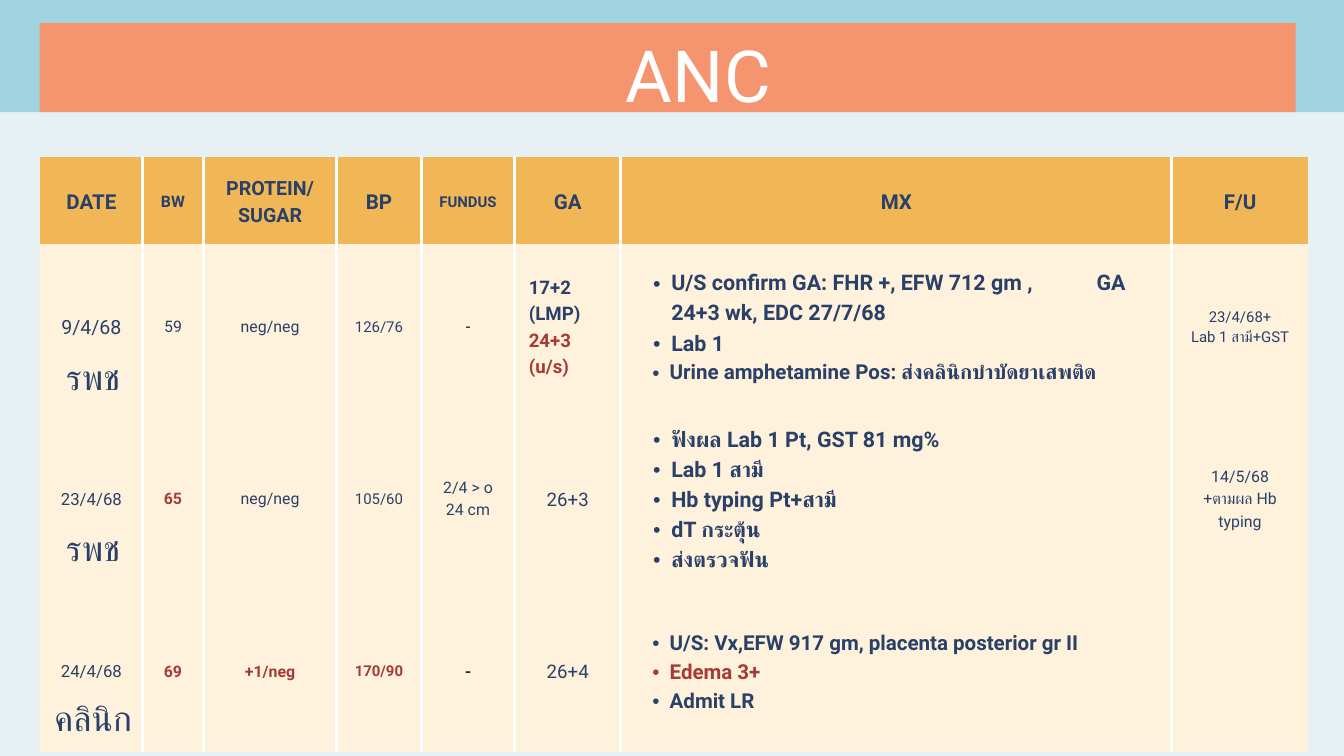
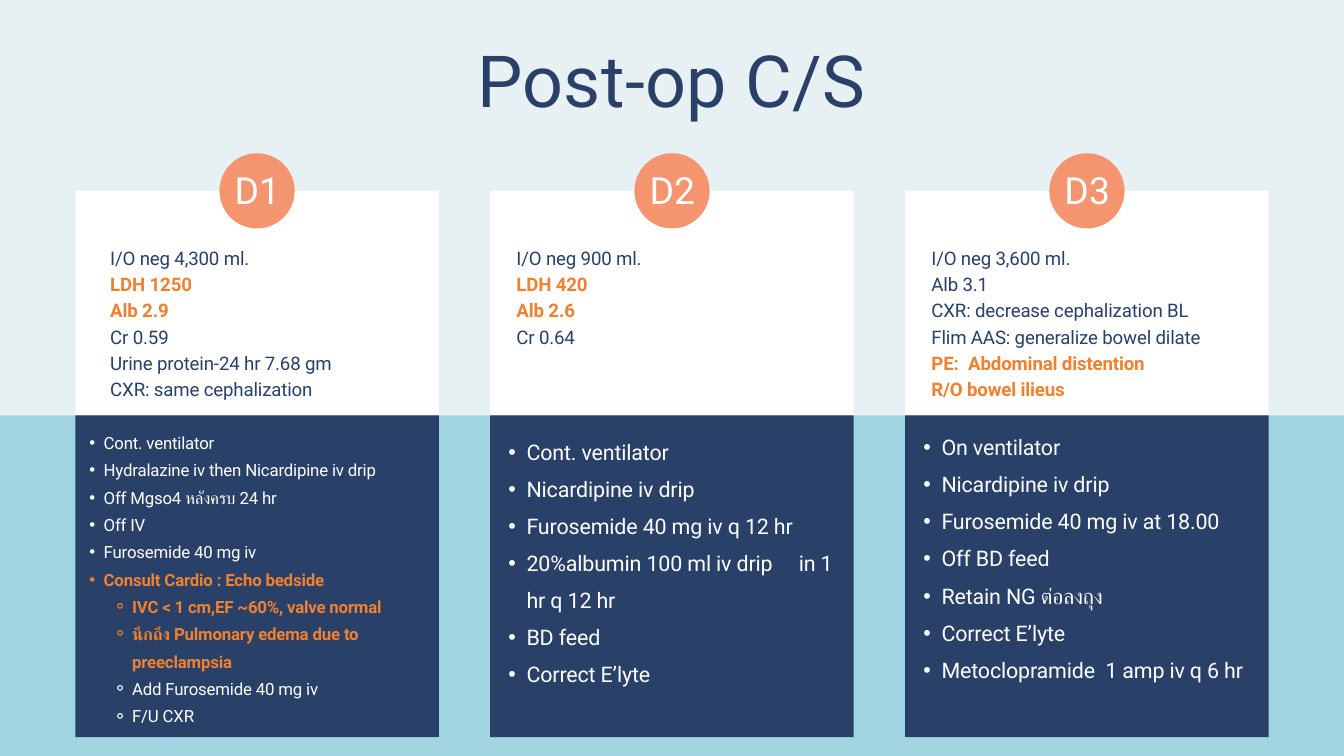
from dataclasses import dataclass

from lxml.etree import SubElement
from pptx import Presentation
from pptx.dml.color import RGBColor
from pptx.enum.shapes import MSO_SHAPE
from pptx.enum.text import MSO_ANCHOR, PP_ALIGN
from pptx.oxml.ns import qn
from pptx.util import Inches, Pt

SLIDE_WIDTH, SLIDE_HEIGHT = 20, 11.25
FONT = "Roboto"
NAVY, WHITE, BLACK = "294069", "FFFFFF", "000000"
PALE, SKY, CORAL = "E7F1F4", "A1D4E1", "F4956F"
AMBER, CREAM = "F1B756", "FFF2DC"
RED, ORANGE = "A43B37", "EF8130"
GAP = "|"  # stands for one widened space inside a line
LEFT, CENTER = PP_ALIGN.LEFT, PP_ALIGN.CENTER


@dataclass
class Line:
    text: str
    size: float
    color: str = NAVY
    bold: bool = False
    level: int = 0
    gap: float = 0


def rgb(color):
    return RGBColor.from_string(color)


def add_run(paragraph, text, line, tracking):
    run = paragraph.add_run()
    run.text = text
    font = run.font
    font.size, font.bold, font.name = Pt(line.size), line.bold, FONT
    font.color.rgb = rgb(line.color)
    properties = run._r.get_or_add_rPr()
    for script in ("a:ea", "a:cs"):
        SubElement(properties, qn(script)).set("typeface", FONT)
    if tracking:
        properties.set("spc", str(round(tracking * 100)))


def add_bullet(paragraph, line):
    """Give the paragraph a hanging bullet whose indent follows the text size."""
    indent = line.size * 0.0235 * line.level
    paragraph.level = line.level
    properties = paragraph._p.get_or_add_pPr()
    properties.set("marL", str(Inches(indent)))
    properties.set("indent", str(-Inches(indent / (line.level + 1))))
    SubElement(properties, qn("a:buFont")).set("typeface", "Arial")
    SubElement(properties, qn("a:buChar")).set("char", "•⚬"[line.level - 1])


def write_lines(frame, lines, align=LEFT, leading=1.4, tracking=0):
    for index, line in enumerate(lines):
        paragraph = frame.add_paragraph() if index else frame.paragraphs[0]
        paragraph.alignment = align
        paragraph.line_spacing = Pt(round(line.size * leading, 1))
        if line.level:
            add_bullet(paragraph, line)
        for part, text in enumerate(line.text.split(GAP)):
            if part:
                add_run(paragraph, " ", line, line.gap)
            add_run(paragraph, text, line, tracking)


def add_text(slide, box, lines, inset=0, anchor=MSO_ANCHOR.TOP, **style):
    frame = slide.shapes.add_textbox(*map(Inches, box)).text_frame
    frame.word_wrap = True
    frame.vertical_anchor = anchor
    frame.margin_left = frame.margin_right = Inches(inset)
    frame.margin_top = frame.margin_bottom = Inches(inset)
    write_lines(frame, lines, **style)


def add_block(slide, box, color, kind=MSO_SHAPE.RECTANGLE):
    shape = slide.shapes.add_shape(kind, *map(Inches, box))
    shape.shadow.inherit = False
    shape.fill.solid()
    shape.fill.fore_color.rgb = rgb(color)
    shape.line.fill.background()


def add_title(slide, box, text, color):
    add_text(slide, box, [Line(text, 77, color)],
             align=CENTER, leading=1.1, tracking=0.4)


def add_slide(presentation, background, band_height, band_color):
    """Add a slide with a full-width band across the top."""
    slide = presentation.slides.add_slide(presentation.slide_layouts[6])
    slide.background.fill.solid()
    slide.background.fill.fore_color.rgb = rgb(background)
    add_block(slide, (0, 0, SLIDE_WIDTH, band_height), band_color)
    return slide


# Antenatal visits

COLUMN_WIDTHS = [1.52, 0.91, 1.98, 1.26, 1.39, 1.58, 8.2, 2.03]
ROW_HEIGHTS = [1.3, 2.43, 2.69, 2.44]
GA_COLUMN, MX_COLUMN = 5, 6
HEADINGS = [("DATE", 22), ("BW", 17), ("PROTEIN/SUGAR", 21), ("BP", 22),
            ("FUNDUS", 16), ("GA", 22), ("MX", 22), ("F/U", 22)]


def plan(text, size=23, color=NAVY, gap=0):
    return Line(text, size, color, True, 1, gap)


VISITS = [
    [
        [Line("9/4/68", 21)],
        [Line("59", 17)],
        [Line("neg/neg", 17)],
        [Line("126/76", 16)],
        [Line("-", 17, BLACK)],
        [Line("17+2", 20, NAVY, True), Line("(LMP)", 20, NAVY, True),
         Line("24+3 (u/s)", 20, RED, True)],
        [plan("U/S confirm GA: FHR +, EFW 712 gm ,|GA 24+3 wk, EDC 27/7/68", gap=62),
         plan("Lab 1"),
         plan("Urine amphetamine Pos: ส่งคลินิกบำบัดยาเสพติด", 22)],
        [Line("23/4/68+", 16), Line("Lab 1 สามี+GST", 16)],
    ],
    [
        [Line("23/4/68", 18)],
        [Line("65", 17, RED, True)],
        [Line("neg/neg", 17)],
        [Line("105/60", 16)],
        [Line("2/4 > o", 17), Line("24 cm", 17)],
        [Line("26+3", 20)],
        [plan("ฟังผล Lab 1 Pt, GST 81 mg%"), plan("Lab 1 สามี"),
         plan("Hb typing Pt+สามี"), plan("dT กระตุ้น"), plan("ส่งตรวจฟัน")],
        [Line("14/5/68", 17), Line("+ตามผล Hb typing", 17)],
    ],
    [
        [Line("24/4/68", 18)],
        [Line("69", 17, RED, True)],
        [Line("+1/neg", 17, RED, True)],
        [Line("170/90", 16, RED, True)],
        [Line("-", 21, BLACK)],
        [Line("26+4", 20)],
        [plan("U/S: Vx,EFW 917 gm, placenta posterior gr II", 22),
         plan("Edema 3+", 22, RED), plan("Admit LR", 22)],
        [],
    ],
]
CLINICS = ["รพช", "รพช", "คลินิก"]


def add_borders(cell, sides):
    """Draw thick white lines on the given sides and none on the others."""
    properties = cell._tc.get_or_add_tcPr()
    for side in "LRTB":
        line = SubElement(properties, qn(f"a:ln{side}"))
        if side in sides:
            line.set("w", str(Pt(3.75)))
            fill = SubElement(line, qn("a:solidFill"))
            SubElement(fill, qn("a:srgbClr")).set("val", WHITE)
        else:
            SubElement(line, qn("a:noFill"))


def fill_cell(cell, lines, color, sides, align):
    add_borders(cell, sides)
    cell.fill.solid()
    cell.fill.fore_color.rgb = rgb(color)
    cell.vertical_anchor = MSO_ANCHOR.MIDDLE
    cell.margin_left = cell.margin_right = Inches(0.21)
    cell.margin_top = cell.margin_bottom = Inches(0.21)
    write_lines(cell.text_frame, lines, align=align)


def add_visit_table(slide, left, top):
    rows = [[[Line(text, size, bold=True)] for text, size in HEADINGS]] + VISITS
    box = (left, top, sum(COLUMN_WIDTHS), sum(ROW_HEIGHTS))
    table = slide.shapes.add_table(
        len(rows), len(HEADINGS), *map(Inches, box)).table
    table.first_row = table.horz_banding = False
    for column, width in zip(table.columns, COLUMN_WIDTHS):
        column.width = Inches(width)
    last = len(HEADINGS) - 1
    for r, cells in enumerate(rows):
        table.rows[r].height = Inches(ROW_HEIGHTS[r])
        for c, lines in enumerate(cells):
            sides = ("L" if c else "") + ("R" if c < last else "")
            flush_left = r and (c == MX_COLUMN or c == GA_COLUMN and len(lines) > 1)
            fill_cell(table.cell(r, c), lines, CREAM if r else AMBER, sides,
                      LEFT if flush_left else CENTER)


def build_visits(presentation):
    slide = add_slide(presentation, PALE, 1.67, SKY)
    add_block(slide, (0.59, 0.34, 18.69, 1.33), CORAL)
    add_title(slide, (7.1, 0.57, 6.58, 1.19), "ANC", WHITE)
    add_visit_table(slide, 0.6, 2.33)
    for index, clinic in enumerate(CLINICS):
        add_text(slide, (0.34, 5.34 + 2.54 * index, 2.09, 0.6),
                 [Line(clinic, 37.8)], align=CENTER, leading=1.1, tracking=0.2)


# Post-operative days

CARD_WIDTH, CARD_MARGIN = 5.41, 1.12
CARD_TOP, CARD_SPLIT, CARD_BOTTOM = 2.84, 6.18, 10.97
BADGE = 1.12


@dataclass
class Day:
    label: str
    findings: list
    findings_inset: float
    orders: list
    orders_inset: float
    orders_leading: float


def finding(text):
    return Line(text, 20)


def alert(text, gap=0):
    return Line(text, 20, ORANGE, True, gap=gap)


def order(text, size=23, level=1, gap=0):
    return Line(text, size, WHITE, False, level, gap)


def urgent(text, level):
    return Line(text, 18, ORANGE, True, level)


DAYS = [
    Day("D1",
        [finding("I/O neg 4,300 ml."), alert("LDH 1250"), alert("Alb 2.9"),
         finding("Cr 0.59"), finding("Urine protein-24 hr 7.68 gm"),
         finding("CXR: same cephalization")], 0.52,
        [order("Cont. ventilator", 18),
         order("Hydralazine iv then Nicardipine iv drip", 18),
         order("Off Mgso4 หลังครบ 24 hr", 18), order("Off IV", 18),
         order("Furosemide 40 mg iv", 18),
         urgent("Consult Cardio : Echo bedside", 1),
         urgent("IVC < 1 cm,EF ~60%, valve normal", 2),
         urgent("นึกถึง Pulmonary edema due to preeclampsia", 2),
         order("Add Furosemide 40 mg iv", 18, 2), order("F/U CXR", 18, 2)],
        0.15, 1.63),
    Day("D2",
        [finding("I/O neg 900 ml."), alert("LDH 420"), alert("Alb 2.6"),
         finding("Cr 0.64")], 0.39,
        [order("Cont. ventilator"), order("Nicardipine iv drip"),
         order("Furosemide 40 mg iv q 12 hr"),
         order("20%albumin 100 ml iv drip|in 1 hr q 12 hr", gap=22),
         order("BD feed"), order("Correct E’lyte")],
        0.19, 1.72),
    Day("D3",
        [finding("I/O neg 3,600 ml."), finding("Alb 3.1"),
         finding("CXR: decrease cephalization BL"),
         finding("Flim AAS: generalize bowel dilate"),
         alert("PE:|Abdominal distention", gap=5), alert("R/O bowel ilieus")], 0.39,
        [order("On ventilator"), order("Nicardipine iv drip"),
         order("Furosemide 40 mg iv at 18.00"), order("Off BD feed"),
         order("Retain NG ต่อลงถุง"), order("Correct E’lyte"),
         order("Metoclopramide|1 amp iv q 6 hr", gap=5)],
        0.11, 1.73),
]


def add_day_card(slide, left, day):
    add_block(slide, (left, CARD_TOP, CARD_WIDTH, CARD_SPLIT - CARD_TOP), WHITE)
    add_block(slide, (left, CARD_SPLIT, CARD_WIDTH, CARD_BOTTOM - CARD_SPLIT), NAVY)
    center = left + CARD_WIDTH / 2
    add_block(slide, (center - BADGE / 2, CARD_TOP - BADGE / 2, BADGE, BADGE),
              CORAL, MSO_SHAPE.OVAL)
    add_text(slide, (center - 0.45, CARD_TOP - 0.41, 0.91, 0.85),
             [Line(day.label, 40, WHITE)], inset=0.06, anchor=MSO_ANCHOR.MIDDLE,
             align=CENTER, leading=1.1, tracking=0.2)
    inset = day.findings_inset
    add_text(slide, (left + inset, CARD_TOP + 0.78, CARD_WIDTH - inset, 2.3),
             day.findings, tracking=-0.2)
    top = CARD_SPLIT + day.orders_inset
    add_text(slide, (left, top, CARD_WIDTH, CARD_BOTTOM - top),
             day.orders, leading=day.orders_leading, tracking=-0.2)


def build_post_op(presentation):
    slide = add_slide(presentation, SKY, CARD_SPLIT, PALE)
    add_title(slide, (2.66, 0.64, 14.67, 1.19), "Post-op C/S", NAVY)
    pitch = (SLIDE_WIDTH - 2 * CARD_MARGIN - CARD_WIDTH) / (len(DAYS) - 1)
    for index, day in enumerate(DAYS):
        add_day_card(slide, CARD_MARGIN + index * pitch, day)


def main():
    presentation = Presentation()
    presentation.slide_width = Inches(SLIDE_WIDTH)
    presentation.slide_height = Inches(SLIDE_HEIGHT)
    build_visits(presentation)
    build_post_op(presentation)
    presentation.save("out.pptx")


if __name__ == "__main__":
    main()
